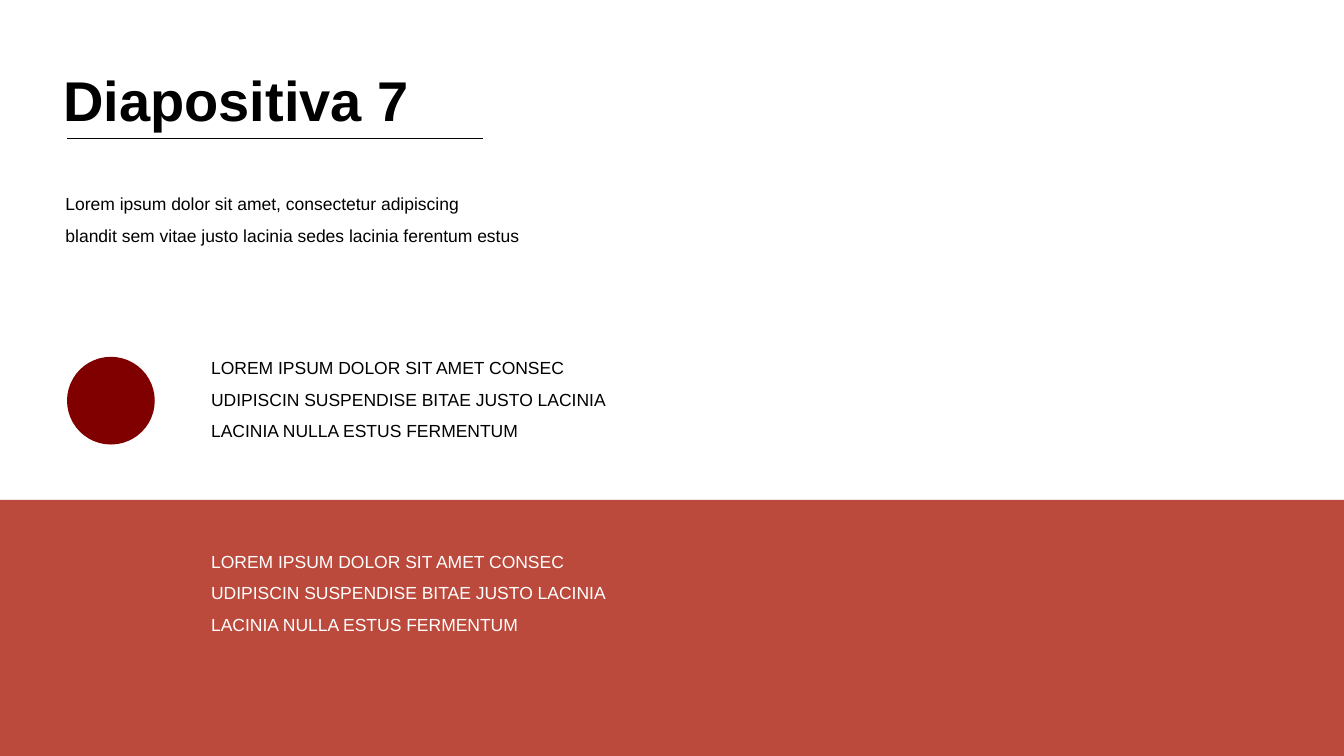
from dataclasses import dataclass

from lxml.etree import SubElement
from pptx import Presentation
from pptx.dml.color import RGBColor
from pptx.enum.shapes import MSO_CONNECTOR, MSO_SHAPE
from pptx.enum.text import MSO_ANCHOR, MSO_AUTO_SIZE, PP_ALIGN
from pptx.oxml.ns import qn
from pptx.util import Emu, Pt

EMU_PER_PX = 9144
SLIDE_WIDTH, SLIDE_HEIGHT = 2666, 1500
BAND_TOP = 992

INTRO = (
    "Lorem ipsum dolor sit amet, consectetur adipiscing",
    "blandit sem vitae justo lacinia sedes lacinia ferentum estus",
)
STATEMENT = (
    "LOREM IPSUM DOLOR SIT AMET CONSEC",
    "UDIPISCIN SUSPENDISE BITAE JUSTO LACINIA",
    "LACINIA NULLA ESTUS FERMENTUM",
)


@dataclass(frozen=True)
class Theme:
    """Colours, font and type sizes of the slide."""

    font: str = "Arial"
    ink: RGBColor = RGBColor(0x00, 0x00, 0x00)
    paper: RGBColor = RGBColor(0xFF, 0xFF, 0xFF)
    band: RGBColor = RGBColor(0xBB, 0x49, 0x3C)
    disc: RGBColor = RGBColor(0x80, 0x00, 0x00)
    title_size: int = 80
    body_size: int = 25
    rule_width: float = 0.5


THEME = Theme()


def px(length):
    """Turn px into EMU."""
    return Emu(length * EMU_PER_PX)


def add_solid(slide, preset, box, colour):
    """Add a filled shape with no outline."""
    solid = slide.shapes.add_shape(preset, *map(px, box))
    solid.shadow.inherit = False
    solid.fill.solid()
    solid.fill.fore_color.rgb = colour
    solid.line.fill.background()


def add_rule(slide, left, right, y):
    """Add a thin horizontal line."""
    rule = slide.shapes.add_connector(
        MSO_CONNECTOR.STRAIGHT, px(left), px(y), px(right), px(y)
    )
    rule.line.color.rgb = THEME.ink
    rule.line.width = Pt(THEME.rule_width)
    SubElement(rule._element.spPr, qn("a:effectLst"))


def add_text(slide, box, lines, colour, size=THEME.body_size, spacing=1.5, bold=False):
    """Add a text box with one paragraph per line."""
    frame = slide.shapes.add_textbox(*map(px, box)).text_frame
    frame.word_wrap = True
    frame.auto_size = MSO_AUTO_SIZE.SHAPE_TO_FIT_TEXT
    frame.vertical_anchor = MSO_ANCHOR.TOP
    frame.text = "\n".join(lines)
    for paragraph in frame.paragraphs:
        paragraph.alignment = PP_ALIGN.LEFT
        paragraph.line_spacing = spacing
        for run in paragraph.runs:
            run.font.name = THEME.font
            run.font.size = Pt(size)
            run.font.bold = bold
            run.font.color.rgb = colour


def main():
    """Build and save the slide."""
    deck = Presentation()
    deck.slide_width, deck.slide_height = px(SLIDE_WIDTH), px(SLIDE_HEIGHT)
    slide = deck.slides.add_slide(deck.slide_layouts[6])
    slide.background.fill.solid()
    slide.background.fill.fore_color.rgb = THEME.paper

    band_box = (0, BAND_TOP, SLIDE_WIDTH, SLIDE_HEIGHT - BAND_TOP)
    add_solid(slide, MSO_SHAPE.RECTANGLE, band_box, THEME.band)
    add_text(slide, (116, 150, 733, 122), ["Diapositiva 7"], THEME.ink,
             size=THEME.title_size, spacing=0.8, bold=True)
    add_rule(slide, 133, 958, 275)
    for top, colour in ((683, THEME.ink), (1067, THEME.paper)):
        add_text(slide, (409, top, 863, 199), STATEMENT, colour)
    add_text(slide, (120, 358, 1263, 199), INTRO, THEME.ink)
    add_solid(slide, MSO_SHAPE.OVAL, (133, 708, 174, 174), THEME.disc)

    deck.save("out.pptx")


if __name__ == "__main__":
    main()
